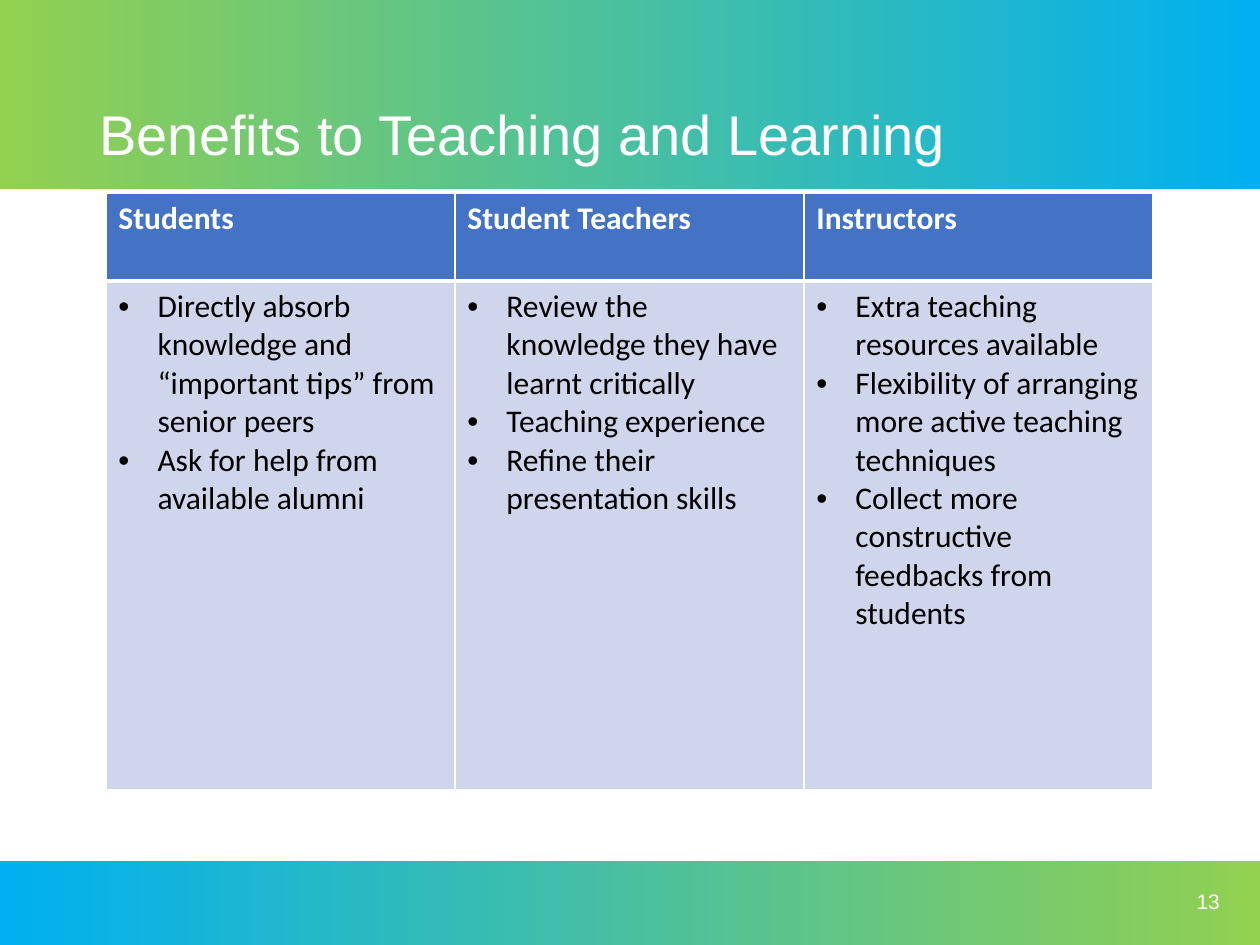
"""Build the slide on benefits to teaching and learning."""
from dataclasses import dataclass

from lxml import etree
from pptx import Presentation
from pptx.dml.color import RGBColor
from pptx.enum.shapes import MSO_SHAPE
from pptx.enum.text import MSO_ANCHOR, MSO_AUTO_SIZE, PP_ALIGN
from pptx.oxml.ns import qn
from pptx.slide import Slide
from pptx.table import _Cell
from pptx.text.text import _Paragraph
from pptx.util import Inches, Pt

RECTANGLE = MSO_SHAPE.RECTANGLE
MIDDLE = MSO_ANCHOR.MIDDLE
NO_AUTO_SIZE = MSO_AUTO_SIZE.NONE
LEFT, RIGHT = PP_ALIGN.LEFT, PP_ALIGN.RIGHT

WHITE = RGBColor(0xFF, 0xFF, 0xFF)
BLACK = RGBColor(0x00, 0x00, 0x00)
SKY = RGBColor(0x00, 0xB0, 0xF0)
LIME = RGBColor(0x92, 0xD0, 0x50)
HEADER_BLUE = RGBColor(0x44, 0x72, 0xC4)
PALE_BLUE = RGBColor(0xCF, 0xD5, 0xEA)

COLUMN_WIDTH = 2.77
ROW_HEIGHTS = (0.7, 4.04)
BULLET_INDENT = Inches(0.31)


@dataclass
class Band:
    top: float
    height: float
    rotation: float


@dataclass
class Audience:
    name: str
    benefits: list[str]


BANDS = [Band(0, 1.5, 180), Band(6.83, 0.67, 0)]
AUDIENCES = [
    Audience("Students", [
        "Directly absorb knowledge and “important tips” from senior peers",
        "Ask for help from available alumni",
    ]),
    Audience("Student Teachers", [
        "Review the knowledge they have learnt critically",
        "Teaching experience",
        "Refine their presentation skills",
    ]),
    Audience("Instructors", [
        "Extra teaching resources available",
        "Flexibility of arranging more active teaching techniques",
        "Collect more constructive feedbacks from students",
    ]),
]


def format_text(paragraph: _Paragraph, name: str, size: float, color: RGBColor, bold: bool = False) -> None:
    for run in paragraph.runs:
        run.font.name = name
        run.font.size = Pt(size)
        run.font.color.rgb = color
        run.font.bold = bold


def add_band(slide: Slide, band: Band) -> None:
    shape = slide.shapes.add_shape(RECTANGLE, 0, Inches(band.top), Inches(10), Inches(band.height))
    shape.rotation = band.rotation
    shape.shadow.inherit = False
    shape.line.fill.background()
    shape.fill.gradient()
    shape.fill.gradient_angle = 0
    for stop, color in zip(shape.fill.gradient_stops, (SKY, LIME)):
        stop.color.rgb = color


def place_title(slide: Slide) -> None:
    title = slide.shapes.title
    title.element.getparent().append(title.element)
    title.left, title.top, title.width, title.height = map(Inches, (0.69, 0.67, 8.62, 0.84))
    frame = title.text_frame
    frame.text = "Benefits to Teaching and Learning"
    frame.auto_size = NO_AUTO_SIZE
    frame.vertical_anchor = MIDDLE
    paragraph = frame.paragraphs[0]
    paragraph.alignment = LEFT
    paragraph.line_spacing = 0.9
    format_text(paragraph, "Arial", 32, WHITE)


def add_page_number(slide: Slide) -> None:
    frame = slide.shapes.add_textbox(*map(Inches, (7.53, 6.95, 2.25, 0.4))).text_frame
    frame.word_wrap = True
    frame.vertical_anchor = MIDDLE
    frame.text = "13"
    paragraph = frame.paragraphs[0]
    paragraph.alignment = RIGHT
    format_text(paragraph, "Arial", 12, WHITE)


def style_cell(cell: _Cell, color: RGBColor, top_width: float, bottom_width: float) -> None:
    cell.fill.solid()
    cell.fill.fore_color.rgb = color
    properties = cell._tc.get_or_add_tcPr()
    borders = {"a:lnL": 1, "a:lnR": 1, "a:lnT": top_width, "a:lnB": bottom_width}
    for position, (tag, width) in enumerate(borders.items()):
        line = etree.Element(qn(tag), w=str(Pt(width)))
        fill = etree.SubElement(line, qn("a:solidFill"))
        etree.SubElement(fill, qn("a:srgbClr"), val=str(WHITE))
        properties.insert(position, line)


def add_bullet(paragraph: _Paragraph) -> None:
    properties = paragraph._p.get_or_add_pPr()
    properties.set("marL", str(BULLET_INDENT))
    properties.set("indent", str(-BULLET_INDENT))
    etree.SubElement(properties, qn("a:buFont"), typeface="Arial")
    etree.SubElement(properties, qn("a:buChar"), char="•")


def add_benefits_table(slide: Slide, audiences: list[Audience]) -> None:
    width = COLUMN_WIDTH * len(audiences)
    frame = slide.shapes.add_table(
        len(ROW_HEIGHTS), len(audiences),
        Inches(0.84), Inches(1.53), Inches(width), Inches(sum(ROW_HEIGHTS)),
    )
    table = frame.table
    for row, height in zip(table.rows, ROW_HEIGHTS):
        row.height = Inches(height)
    for index, audience in enumerate(audiences):
        table.columns[index].width = Inches(COLUMN_WIDTH)
        header, body = table.cell(0, index), table.cell(1, index)
        style_cell(header, HEADER_BLUE, 1, 3)
        style_cell(body, PALE_BLUE, 3, 1)
        header.text_frame.text = audience.name
        format_text(header.text_frame.paragraphs[0], "Calibri", 18, WHITE, bold=True)
        body.text_frame.text = "\n".join(audience.benefits)
        for paragraph in body.text_frame.paragraphs:
            add_bullet(paragraph)
            format_text(paragraph, "Calibri", 18, BLACK)


def main() -> None:
    presentation = Presentation()
    presentation.slide_width = Inches(10)
    presentation.slide_height = Inches(7.5)
    slide = presentation.slides.add_slide(presentation.slide_layouts[5])
    for band in BANDS:
        add_band(slide, band)
    place_title(slide)
    add_page_number(slide)
    add_benefits_table(slide, AUDIENCES)
    presentation.save("out.pptx")


if __name__ == "__main__":
    main()
